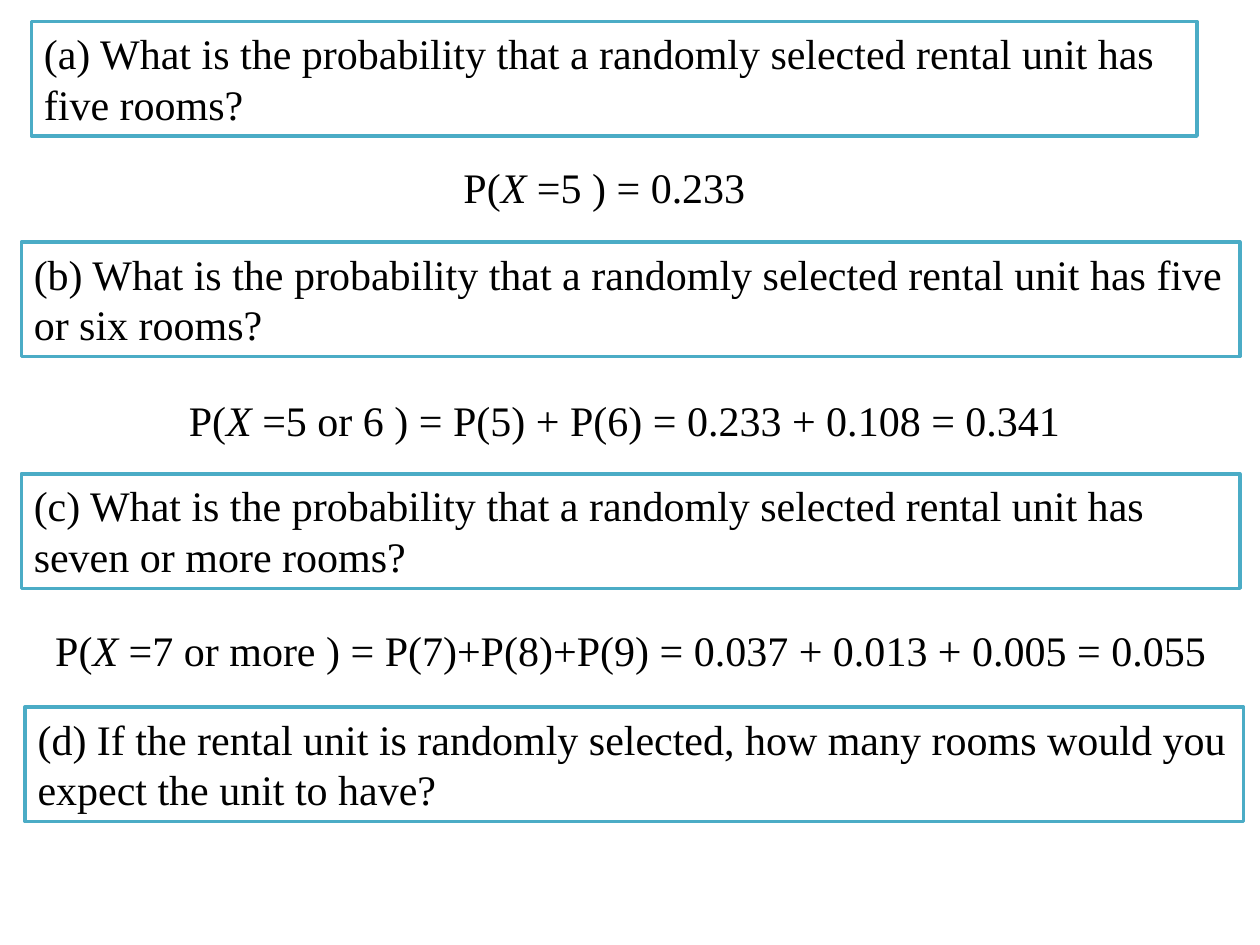
from pptx import Presentation
from pptx.dml.color import RGBColor
from pptx.enum.shapes import MSO_SHAPE
from pptx.enum.text import MSO_ANCHOR, MSO_AUTO_SIZE, PP_ALIGN
from pptx.util import Inches, Pt

BLACK = RGBColor(0x00, 0x00, 0x00)
WHITE = RGBColor(0xFF, 0xFF, 0xFF)
TEAL = RGBColor(0x4B, 0xAC, 0xC6)

QUESTIONS = [
    (0.25, 0.17, 9.25, "(a) What is the probability that a randomly "
     "selected rental unit has five rooms?"),
    (0.17, 1.92, 9.67, "(b) What is the probability that a randomly "
     "selected rental unit has five or six rooms?"),
    (0.17, 3.76, 9.67, "(c) What is the probability that a randomly "
     "selected rental unit has seven or more rooms?"),
    (0.2, 5.61, 9.67, "(d) If the rental unit is randomly selected, "
     "how many rooms would you expect the unit to have?"),
]
ANSWERS = [
    (3.58, 1.23, 7.25, " =5 ) = 0.233"),
    (1.4, 3.08, 7.25, " =5 or 6 ) = P(5) + P(6) = 0.233 + 0.108 = 0.341"),
    (0.34, 4.91, 9.67,
     " =7 or more ) = P(7)+P(8)+P(9) = 0.037 + 0.013 + 0.005 = 0.055"),
]


def write(shape, parts):
    """Fill the shape with runs, setting the variable X in italics."""
    frame = shape.text_frame
    frame.word_wrap = True
    frame.auto_size = MSO_AUTO_SIZE.SHAPE_TO_FIT_TEXT
    frame.vertical_anchor = MSO_ANCHOR.TOP
    para = frame.paragraphs[0]
    para.alignment = PP_ALIGN.LEFT
    for part in parts:
        run = para.add_run()
        run.text = part
        run.font.name = "Times New Roman"
        run.font.size = Pt(24)
        run.font.color.rgb = BLACK
        run.font.italic = part == "X"


prs = Presentation()
prs.slide_width = Inches(10)
prs.slide_height = Inches(7.5)
slide = prs.slides.add_slide(prs.slide_layouts[6])

for left, top, width, text in QUESTIONS:
    box = slide.shapes.add_shape(MSO_SHAPE.RECTANGLE, Inches(left),
                                 Inches(top), Inches(width), Inches(0.91))
    box.shadow.inherit = False
    box.fill.solid()
    box.fill.fore_color.rgb = WHITE
    box.line.color.rgb = TEAL
    box.line.width = Pt(2)
    write(box, [text])

for left, top, width, text in ANSWERS:
    box = slide.shapes.add_textbox(Inches(left), Inches(top),
                                   Inches(width), Inches(0.5))
    write(box, ["P(", "X", text])

prs.save("out.pptx")
